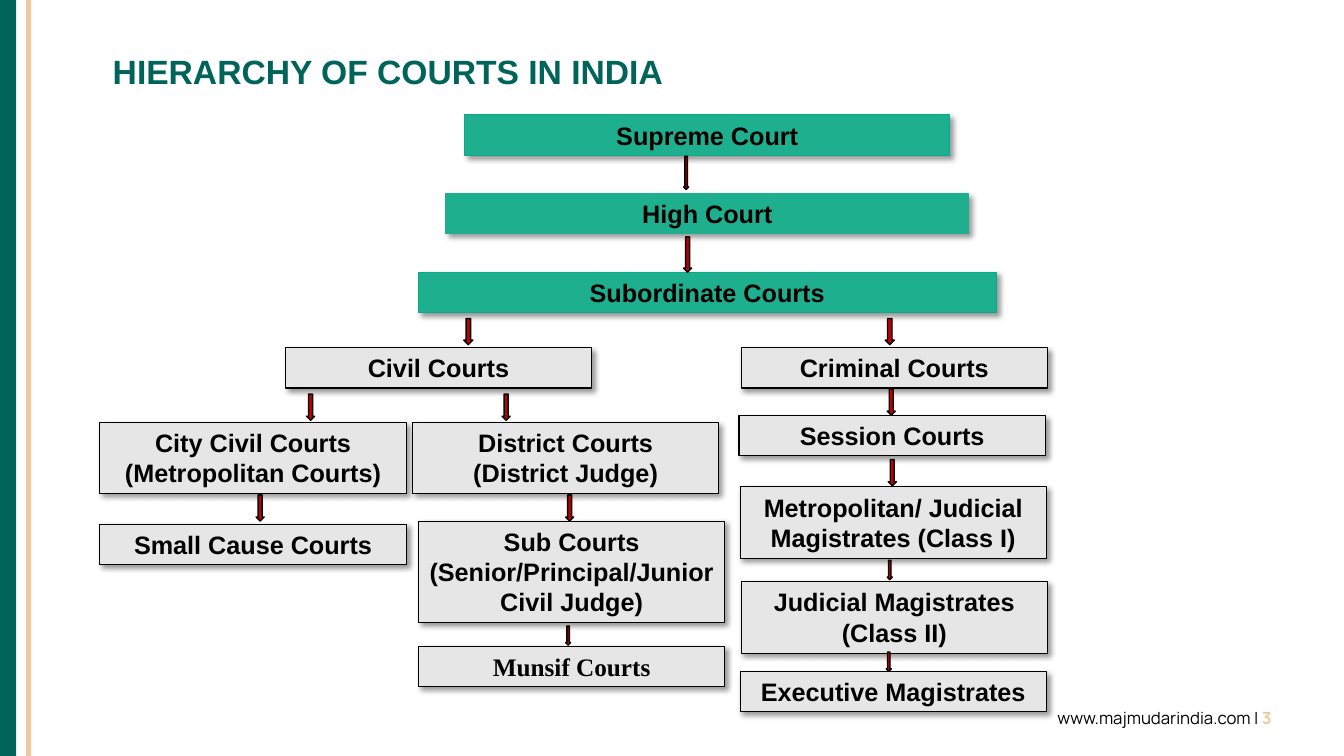
from dataclasses import dataclass

import pptx
import pptx.dml.color
import pptx.enum.shapes
import pptx.enum.text
import pptx.oxml
import pptx.oxml.ns
import pptx.util
from pptx.util import Inches


@dataclass(frozen=True)
class Theme:
    dark_green: str = "00645B"
    sand: str = "EFC99D"
    court_green: str = "1EAF8E"
    court_edge: str = "09AA88"
    grey: str = "E7E6E6"
    red: str = "C00000"
    black: str = "000000"
    font: str = "Arial"
    serif: str = "Times New Roman"
    footer_font: str = "Manrope"
    title_size: int = 24
    court_size: int = 18
    footer_size: int = 12


THEME = Theme()
COURT_WIDTH = 3.04
# Box height for one, two or three lines of text
HEIGHTS = {1: 0.4, 2: 0.71, 3: 1.01}

# Upper courts: left, top, width, edge colour, name
UPPER_COURTS = [
    (4.61, 1.14, 4.81, THEME.court_edge, "Supreme Court"),
    (4.42, 1.92, 5.19, THEME.court_green, "High Court"),
    (4.15, 2.7, 5.73, THEME.court_edge, "Subordinate Courts"),
]

# Lower courts: left, top, number of lines, paragraphs
LOWER_COURTS = [
    (2.83, 3.45, 1, ["Civil Courts"]),
    (0.99, 4.19, 2, ["City Civil Courts (Metropolitan Courts)"]),
    (0.99, 5.2, 1, ["Small Cause Courts"]),
    (4.09, 4.19, 2, ["District Courts", "(District Judge)"]),
    (4.15, 5.17, 3, ["Sub Courts", "(Senior/Principal/Junior Civil Judge)"]),
    (7.35, 3.45, 1, ["Criminal Courts"]),
    (7.33, 4.12, 1, ["Session Courts"]),
    (7.34, 4.83, 2, ["Metropolitan/ Judicial Magistrates (Class I)"]),
    (7.35, 5.77, 2, ["Judicial Magistrates (Class II)"]),
    (7.34, 6.66, 1, ["Executive Magistrates"]),
]

# Arrows grouped by size: (width, height) -> left and top of each
ARROWS = {
    (0.05, 0.33): [(6.78, 1.55)],
    (0.08, 0.35): [(6.78, 2.35)],
    (0.09, 0.26): [(4.6, 3.16), (8.78, 3.16)],
    (0.08, 0.26): [(3.04, 3.91), (4.98, 3.91), (2.54, 4.91), (5.61, 4.91),
                   (8.8, 3.86), (8.81, 4.56)],
    (0.05, 0.19): [(5.61, 6.21), (8.8, 5.56), (8.79, 6.47)],
}


def color(value):
    return pptx.dml.color.RGBColor.from_string(value)


def add_run(paragraph, text, size, font, ink, bold=True):
    run = paragraph.add_run()
    run.text = text
    run.font.size = pptx.util.Pt(size)
    run.font.name = font
    run.font.bold = bold
    run.font.color.rgb = color(ink)


def add_text_box(slide, left, top, width, height):
    """Add a wrapping text box and return its first paragraph."""
    box = slide.shapes.add_textbox(
        Inches(left), Inches(top), Inches(width), Inches(height))
    box.text_frame.word_wrap = True
    return box.text_frame.paragraphs[0]


def add_filled_shape(slide, kind, left, top, width, height, fill,
                     edge=None, edge_width=0.75):
    shape = slide.shapes.add_shape(
        kind, Inches(left), Inches(top), Inches(width), Inches(height))
    shape.shadow.inherit = False
    shape.fill.solid()
    shape.fill.fore_color.rgb = color(fill)
    if edge:
        shape.line.color.rgb = color(edge)
        shape.line.width = pptx.util.Pt(edge_width)
    else:
        shape.line.fill.background()
    return shape


def add_bar(slide, left, width, fill):
    add_filled_shape(slide, pptx.enum.shapes.MSO_SHAPE.RECTANGLE,
                     left, 0, width, 7.5, fill)


def add_drop_shadow(shape):
    effects = shape.element.spPr.find(pptx.oxml.ns.qn("a:effectLst"))
    effects.append(pptx.oxml.parse_xml(
        f'<a:outerShdw {pptx.oxml.ns.nsdecls("a")} blurRad="50800" dist="38100" '
        'dir="2700000" algn="tl" rotWithShape="0">'
        f'<a:srgbClr val="{THEME.black}"><a:alpha val="40000"/></a:srgbClr>'
        '</a:outerShdw>'))


def add_court(slide, left, top, width, height, fill, edge, texts, font=THEME.font):
    shape = add_filled_shape(slide, pptx.enum.shapes.MSO_SHAPE.RECTANGLE,
                             left, top, width, height, fill, edge)
    add_drop_shadow(shape)
    frame = shape.text_frame
    frame.word_wrap = True
    frame.auto_size = pptx.enum.text.MSO_AUTO_SIZE.SHAPE_TO_FIT_TEXT
    frame.vertical_anchor = pptx.enum.text.MSO_ANCHOR.TOP
    for index, text in enumerate(texts):
        paragraph = frame.add_paragraph() if index else frame.paragraphs[0]
        paragraph.alignment = pptx.enum.text.PP_ALIGN.CENTER
        add_run(paragraph, text, THEME.court_size, font, THEME.black)


def add_arrow(slide, left, top, width, height):
    add_filled_shape(slide, pptx.enum.shapes.MSO_SHAPE.DOWN_ARROW,
                     left, top, width, height, THEME.red, THEME.black, 1)


def add_title(slide, text):
    paragraph = add_text_box(slide, 1.02, 0.5, 11.53, 0.7)
    paragraph.line_spacing = 0.9
    add_run(paragraph, text, THEME.title_size, THEME.font, THEME.dark_green)


def add_footer(slide, address, number):
    paragraph = add_text_box(slide, 10.39, 6.97, 2.87, 0.3)
    add_run(paragraph, f"{address} | ", THEME.footer_size, THEME.footer_font,
            THEME.black, bold=False)
    add_run(paragraph, number, THEME.footer_size, THEME.footer_font, THEME.sand)


def main():
    presentation = pptx.Presentation()
    presentation.slide_width = Inches(13.33)
    presentation.slide_height = Inches(7.5)
    slide = presentation.slides.add_slide(presentation.slide_layouts[6])

    # Page frame and title
    add_footer(slide, "www.majmudarindia.com", "3")
    add_bar(slide, 0, 0.16, THEME.dark_green)
    add_bar(slide, 0.26, 0.05, THEME.sand)
    add_title(slide, "HIERARCHY OF COURTS IN INDIA")

    # Courts
    for left, top, width, edge, name in UPPER_COURTS:
        add_court(slide, left, top, width, HEIGHTS[1], THEME.court_green, edge, [name])
    for left, top, lines, texts in LOWER_COURTS:
        add_court(slide, left, top, COURT_WIDTH, HEIGHTS[lines],
                  THEME.grey, THEME.black, texts)
    add_court(slide, 4.15, 6.41, COURT_WIDTH, HEIGHTS[1],
              THEME.grey, THEME.black, ["Munsif Courts"], THEME.serif)

    # Arrows between levels
    for (width, height), places in ARROWS.items():
        for left, top in places:
            add_arrow(slide, left, top, width, height)

    presentation.save("out.pptx")


if __name__ == "__main__":
    main()
